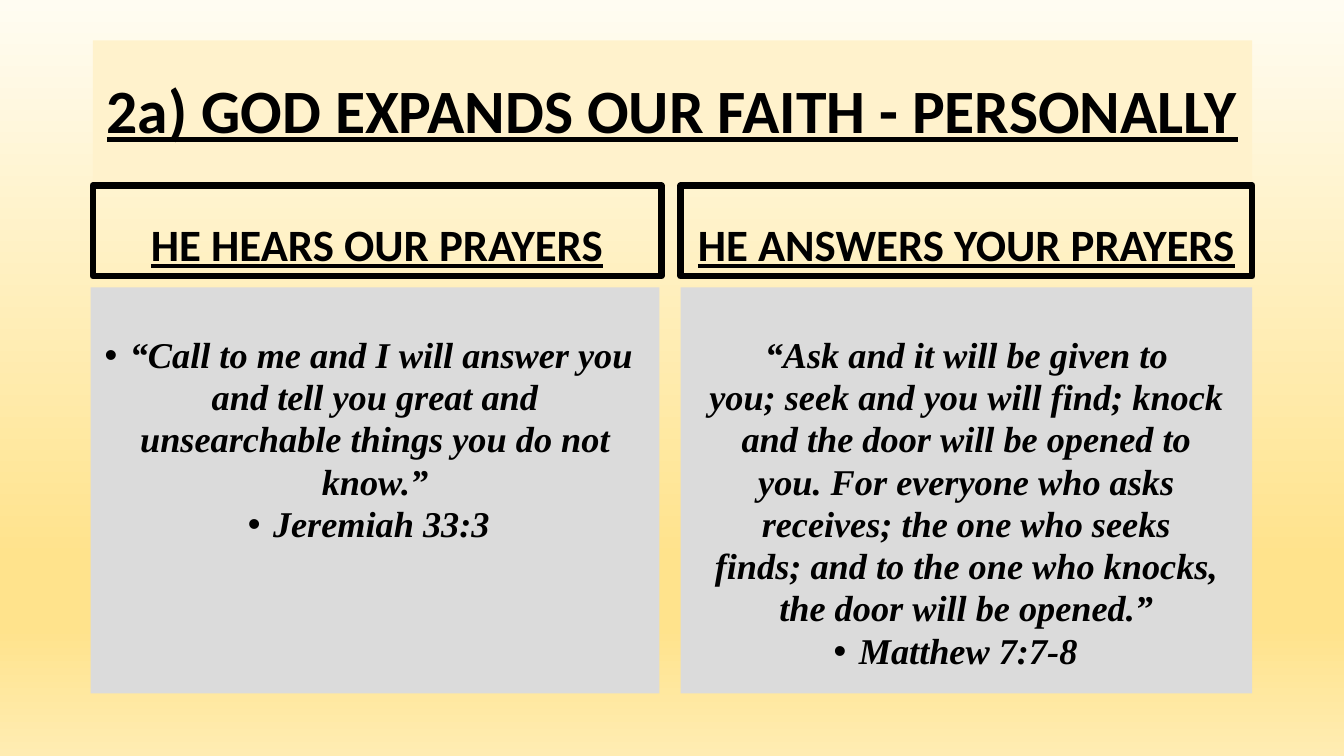
from lxml import etree
from pptx import Presentation
from pptx.dml.color import RGBColor
from pptx.enum.text import MSO_ANCHOR, MSO_AUTO_SIZE, PP_ALIGN
from pptx.oxml import parse_xml
from pptx.oxml.ns import nsdecls, qn
from pptx.util import Inches, Pt

CENTER = PP_ALIGN.CENTER
TOP, MIDDLE, BOTTOM = MSO_ANCHOR.TOP, MSO_ANCHOR.MIDDLE, MSO_ANCHOR.BOTTOM
NO_AUTOFIT = MSO_AUTO_SIZE.NONE

BLACK = RGBColor(0x00, 0x00, 0x00)
CREAM = RGBColor(0xFF, 0xF2, 0xCC)
GRAY = RGBColor(0xDB, 0xDB, 0xDB)
BACKGROUND_STOPS = [
    (0, RGBColor(0xFF, 0xFC, 0xF2)),
    (74, RGBColor(0xFF, 0xE3, 0x8C)),
    (83, RGBColor(0xFF, 0xE3, 0x8C)),
    (100, RGBColor(0xFF, 0xEC, 0xB2)),
]

HEADING_FONT = "Calibri"
VERSE_FONT = "Times New Roman"
COMPARISON_LAYOUT = 4
HEADER_TOP, HEADER_HEIGHT = 1.84, 0.9
VERSE_TOP, VERSE_HEIGHT = 2.85, 4.03

HARD_SPACE = chr(160)
TITLE = "2a) GOD EXPANDS OUR FAITH - PERSONALLY"
# Each column: header left, verse left, width, header, [(text, bulleted), ...]
COLUMNS = [
    (0.92, 0.9, 5.64, "HE HEARS OUR PRAYERS", [
        (f"“Call{HARD_SPACE}to me and I will answer you and tell you great and "
         f"unsearchable{HARD_SPACE}things you do not know.”", True),
        ("Jeremiah 33:3", True),
    ]),
    (6.75, 6.75, 5.67, "HE ANSWERS YOUR PRAYERS", [
        (f"“Ask and it will be given to you;{HARD_SPACE}seek and you will find; "
         f"knock and the door will be opened to you.{HARD_SPACE}For everyone who "
         f"asks receives; the one who seeks finds;{HARD_SPACE}and to the one who "
         "knocks, the door will be opened.”", False),
        ("Matthew 7:7-8 ", True),
    ]),
]


def set_gradient_background(slide):
    slide.background.fill.gradient()
    gradient = slide.background._cSld.find(".//" + qn("a:gradFill"))
    stops = "".join(
        f'<a:gs pos="{position * 1000}"><a:srgbClr val="{color}"/></a:gs>'
        for position, color in BACKGROUND_STOPS)
    gradient.getparent().replace(gradient, parse_xml(
        f'<a:gradFill {nsdecls("a")} rotWithShape="1"><a:gsLst>{stops}</a:gsLst>'
        '<a:lin ang="5400000" scaled="0"/></a:gradFill>'))


def place(shape, left, top, width, height, anchor):
    shape.left, shape.top = Inches(left), Inches(top)
    shape.width, shape.height = Inches(width), Inches(height)
    frame = shape.text_frame
    frame.word_wrap = True
    frame.auto_size = NO_AUTOFIT
    frame.vertical_anchor = anchor


def fill_solid(shape, color):
    shape.fill.solid()
    shape.fill.fore_color.rgb = color


def format_paragraph(paragraph, font_name, size, line_spacing, space_before=0):
    paragraph.alignment = CENTER
    paragraph.line_spacing = line_spacing
    paragraph.space_before = Pt(space_before)
    for run in paragraph.runs:
        run.font.name = font_name
        run.font.size = Pt(size)
        run.font.bold = True
        run.font.color.rgb = BLACK


def set_bullet(paragraph, bulleted):
    properties = paragraph._p.get_or_add_pPr()
    properties.set("marL", "0")
    properties.set("indent", str(-Inches(0.25) if bulleted else 0))
    if bulleted:
        etree.SubElement(properties, qn("a:buFont"), typeface="Arial")
        etree.SubElement(properties, qn("a:buChar"), char="•")
    else:
        etree.SubElement(properties, qn("a:buNone"))


def write_heading(shape, text, size, space_before=0):
    shape.text_frame.text = text
    paragraph = shape.text_frame.paragraphs[0]
    format_paragraph(paragraph, HEADING_FONT, size, 0.9, space_before)
    paragraph.runs[0].font.underline = True


def write_verse(shape, verse):
    frame = shape.text_frame
    frame.margin_top = Inches(0.47)
    frame.text = "\n".join(text for text, _ in verse)
    for paragraph, (_, bulleted) in zip(frame.paragraphs, verse):
        format_paragraph(paragraph, VERSE_FONT, 25.9, 0.97)
        paragraph.runs[0].font.italic = True
        set_bullet(paragraph, bulleted)


def add_column(header, body, column):
    header_left, verse_left, width, heading, verse = column
    place(header, header_left, HEADER_TOP, width, HEADER_HEIGHT, BOTTOM)
    header.line.color.rgb = BLACK
    header.line.width = Pt(4.5)
    write_heading(header, heading, 32, space_before=10)

    place(body, verse_left, VERSE_TOP, width, VERSE_HEIGHT, TOP)
    fill_solid(body, GRAY)
    write_verse(body, verse)


def main():
    presentation = Presentation()
    presentation.slide_width = Inches(13.33)
    presentation.slide_height = Inches(7.5)
    layout = presentation.slide_layouts[COMPARISON_LAYOUT]
    slide = presentation.slides.add_slide(layout)
    set_gradient_background(slide)

    title, *boxes = list(slide.placeholders)
    place(title, 0.92, 0.4, 11.5, 1.45, MIDDLE)
    fill_solid(title, CREAM)
    write_heading(title, TITLE, 44)

    for header, body, column in zip(boxes[::2], boxes[1::2], COLUMNS):
        add_column(header, body, column)
    presentation.save("out.pptx")


if __name__ == "__main__":
    main()
